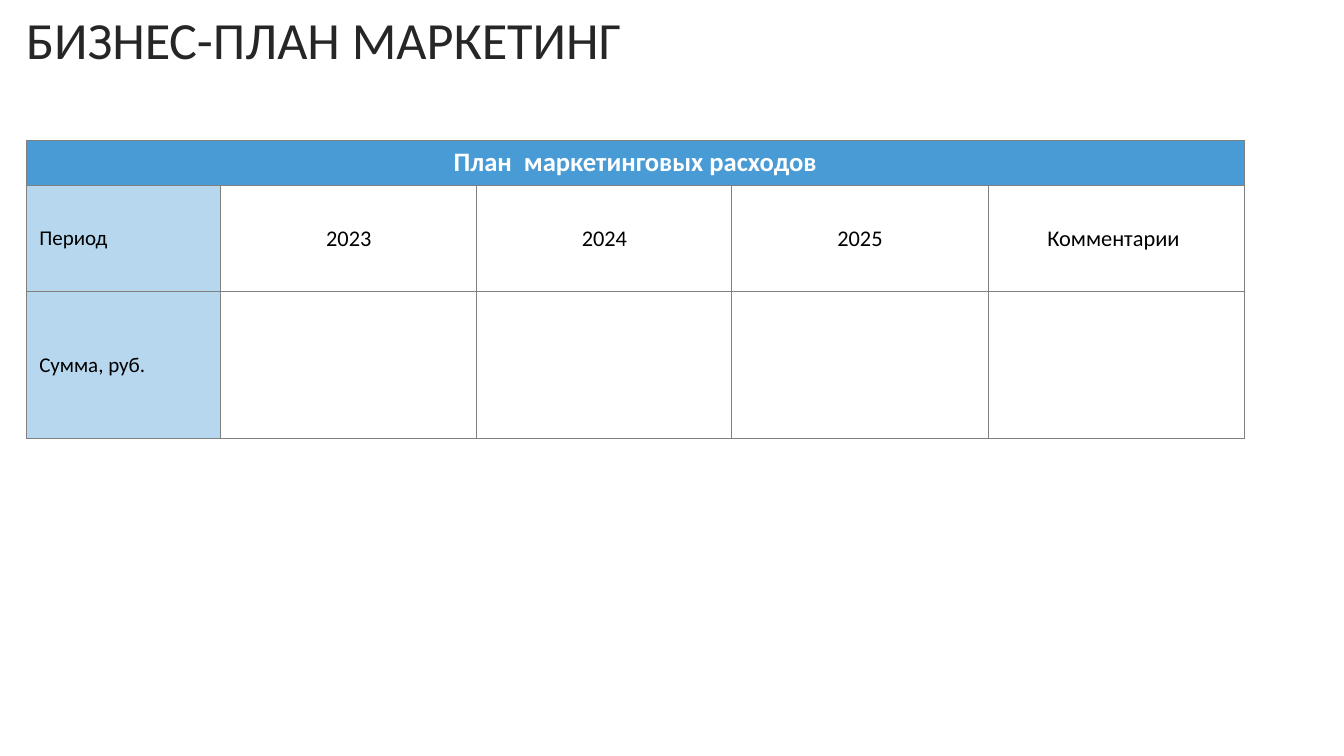
from lxml import etree
from pptx import Presentation
from pptx import util as u
from pptx.dml.color import RGBColor
from pptx.enum import text
from pptx.oxml import ns

COLS = [1.93, 2.54, 2.53, 2.54, 2.54]
ROWS = [0.45, 1.05, 1.46]
HEAD = "План  маркетинговых расходов"
BODY = [
    ["Период", "2023", "2024", "2025", "Комментарии "],
    ["Сумма, руб.", "", "", "", ""],
]
LEFT, MID = text.PP_ALIGN.LEFT, text.PP_ALIGN.CENTER


def paint(form, tint):
    form.rgb = RGBColor.from_string(tint)


def write(frame, words, size, tint, align=LEFT, bold=False):
    para = frame.paragraphs[0]
    para.alignment = align
    run = para.add_run()
    run.text = words
    run.font.name = "Calibri"
    run.font.size = u.Pt(size)
    run.font.bold = bold
    paint(run.font.color, tint)


def title(slide, words):
    box = slide.shapes.add_textbox(
        u.Inches(0.16), u.Inches(0), u.Inches(12.18), u.Inches(0.62))
    frame = box.text_frame
    frame.word_wrap = True
    frame.margin_top = u.Inches(0.07)
    frame.margin_bottom = u.Inches(0)
    write(frame, words, 37.3, "262626")


def edge(cell):
    props = cell._tc.get_or_add_tcPr()
    for spot, side in enumerate(("lnL", "lnR", "lnT", "lnB")):
        line = etree.Element(ns.qn("a:" + side), w=str(u.Pt(0.75)))
        fill = etree.SubElement(line, ns.qn("a:solidFill"))
        etree.SubElement(fill, ns.qn("a:srgbClr"), val="808080")
        props.insert(spot, line)


def dress(cell, tint=None):
    cell.vertical_anchor = text.MSO_ANCHOR.MIDDLE
    cell.margin_left = cell.margin_right = u.Inches(0.13)
    cell.margin_top = cell.margin_bottom = u.Inches(0.05)
    if tint:
        cell.fill.solid()
        paint(cell.fill.fore_color, tint)
    else:
        cell.fill.background()
    edge(cell)


def costs(slide):
    grid = slide.shapes.add_table(
        len(ROWS), len(COLS), u.Inches(0.26), u.Inches(1.39),
        u.Inches(sum(COLS)), u.Inches(sum(ROWS))).table
    grid.first_row = grid.horz_banding = False
    for col, width in zip(grid.columns, COLS):
        col.width = u.Inches(width)
    for row, height in zip(grid.rows, ROWS):
        row.height = u.Inches(height)

    for cell in grid.rows[0].cells:
        dress(cell, "499BD5")
    head = grid.cell(0, 0)
    head.merge(grid.cell(0, len(COLS) - 1))
    write(head.text_frame, HEAD, 19, "FFFFFF", MID, True)

    for r, line in enumerate(BODY, 1):
        for c, words in enumerate(line):
            cell = grid.cell(r, c)
            dress(cell, None if c else "B6D7EE")
            if words:
                write(cell.text_frame, words, 16 if c else 15, "000000",
                      MID if c else LEFT)


def main():
    deck = Presentation()
    deck.slide_width = u.Inches(13.33)
    deck.slide_height = u.Inches(7.5)
    slide = deck.slides.add_slide(deck.slide_layouts[6])
    title(slide, "БИЗНЕС-ПЛАН МАРКЕТИНГ")
    costs(slide)
    deck.save("out.pptx")


if __name__ == "__main__":
    main()
